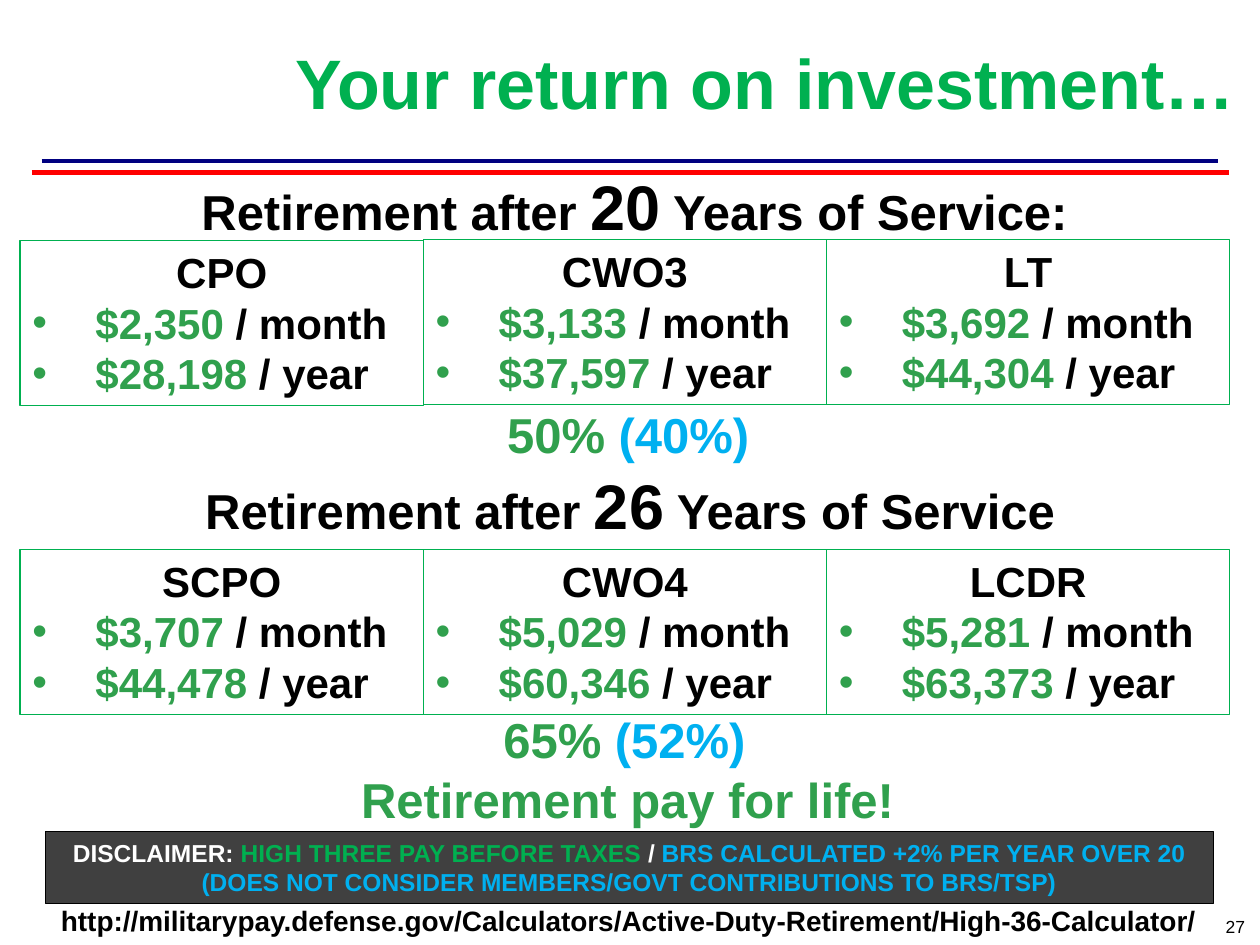
"""Build the retirement pay comparison slide."""
from lxml.etree import SubElement
from pptx import Presentation
from pptx.dml.color import RGBColor
from pptx.enum.shapes import MSO_CONNECTOR, MSO_SHAPE
from pptx.enum.text import MSO_ANCHOR, MSO_AUTO_SIZE, PP_ALIGN
from pptx.oxml.ns import qn
from pptx.util import Inches, Pt

BLACK = RGBColor(0x00, 0x00, 0x00)
WHITE = RGBColor(0xFF, 0xFF, 0xFF)
NAVY = RGBColor(0x00, 0x00, 0x80)
RED = RGBColor(0xFF, 0x00, 0x00)
GREEN = RGBColor(0x00, 0xB0, 0x50)
PAY_GREEN = RGBColor(0x30, 0xA0, 0x4D)
BLUE = RGBColor(0x00, 0xB0, 0xF0)
GRAY = RGBColor(0x40, 0x40, 0x40)
FONT = "Arial"

TITLE = "Your return on investment…"
RULES = [(0.33, 1.28, NAVY), (0.25, 1.37, RED)]
HEADINGS = [
    ((1.39, 1.28, 7.29, 0.71), "20", " Years of Service:"),
    ((1.39, 3.65, 7.22, 0.71), "26", " Years of Service"),
]
PERCENTAGES = [
    ((3.91, 3.16, 2.15, 0.57), "50% ", "(40%)"),
    ((3.76, 5.58, 2.39, 0.57), "65% ", "(52%)"),
]
PAY_ROWS = [
    ((1.91, 1.9, 1.9), [("CPO", "$2,350", "$28,198"),
                        ("CWO3", "$3,133", "$37,597"),
                        ("LT", "$3,692", "$44,304")]),
    ((4.36, 4.36, 4.36), [("SCPO", "$3,707", "$44,478"),
                          ("CWO4", "$5,029", "$60,346"),
                          ("LCDR", "$5,281", "$63,373")]),
]
CARD_LEFT, CARD_WIDTH, CARD_HEIGHT = 0.16, 3.2, 1.31
DISCLAIMER = [
    ("DISCLAIMER: ", WHITE),
    ("HIGH THREE PAY BEFORE TAXES ", GREEN),
    ("/ ", WHITE),
    ("BRS CALCULATED +2% PER YEAR OVER 20 "
     "(DOES NOT CONSIDER MEMBERS/GOVT CONTRIBUTIONS TO BRS/TSP)", BLUE),
]
LINK = "http://militarypay.defense.gov/Calculators/Active-Duty-Retirement/High-36-Calculator/"


def write(paragraph, runs, size, align=PP_ALIGN.CENTER, bold=True):
    paragraph.alignment = align
    paragraph.font.name = FONT
    paragraph.font.size = Pt(size)
    paragraph.font.bold = bold
    for text, color, *own_size in runs:
        run = paragraph.add_run()
        run.text = text
        run.font.color.rgb = color
        if own_size:
            run.font.size = Pt(own_size[0])


def add_text(slide, box, runs, size, wrap=True, **style):
    frame = slide.shapes.add_textbox(*map(Inches, box)).text_frame
    frame.word_wrap = wrap
    write(frame.paragraphs[0], runs, size, **style)


def add_box(slide, box, line_color, fill_color=None):
    shape = slide.shapes.add_shape(MSO_SHAPE.RECTANGLE, *map(Inches, box))
    shape.shadow.inherit = False
    if fill_color is None:
        shape.fill.background()
    else:
        shape.fill.solid()
        shape.fill.fore_color.rgb = fill_color
    shape.line.color.rgb = line_color
    shape.line.width = Pt(0.75)
    frame = shape.text_frame
    frame.word_wrap = True
    frame.auto_size = MSO_AUTO_SIZE.SHAPE_TO_FIT_TEXT
    frame.vertical_anchor = MSO_ANCHOR.TOP
    return frame


def add_bullet(paragraph, color):
    properties = paragraph._p.get_or_add_pPr()
    properties.set("marL", str(Inches(0.5)))
    properties.set("indent", str(Inches(-0.5)))
    bullet_color = SubElement(properties, qn("a:buClr"))
    SubElement(bullet_color, qn("a:srgbClr")).set("val", str(color))
    SubElement(properties, qn("a:buFont")).set("typeface", FONT)
    SubElement(properties, qn("a:buChar")).set("char", "•")


def add_pay_card(slide, box, rank, monthly, yearly):
    frame = add_box(slide, box, GREEN)
    write(frame.paragraphs[0], [(rank, BLACK)], 24)
    for amount, period in ((monthly, "month"), (yearly, "year")):
        paragraph = frame.add_paragraph()
        add_bullet(paragraph, PAY_GREEN)
        runs = [(f"{amount} ", PAY_GREEN), (f"/ {period}", BLACK)]
        write(paragraph, runs, 24, PP_ALIGN.LEFT)


def add_rule(slide, left, top, color):
    rule = slide.shapes.add_connector(
        MSO_CONNECTOR.STRAIGHT, Inches(left), Inches(top), Inches(10 - left), Inches(top))
    rule.line.color.rgb = color
    rule.line.width = Pt(2.5)
    SubElement(rule._element.spPr, qn("a:effectLst"))


def add_title(slide):
    title = slide.shapes.title
    title.left, title.top, title.width, title.height = map(Inches, (1, 0.34, 9, 0.69))
    frame = title.text_frame
    frame.word_wrap = True
    frame.auto_size = MSO_AUTO_SIZE.NONE
    frame.vertical_anchor = MSO_ANCHOR.BOTTOM
    frame.margin_right = Inches(0.2)
    paragraph = frame.paragraphs[0]
    paragraph.line_spacing = 0.85
    write(paragraph, [(TITLE, GREEN)], 40, PP_ALIGN.RIGHT)


def main():
    presentation = Presentation()
    presentation.slide_width, presentation.slide_height = Inches(10), Inches(7.5)
    slide = presentation.slides.add_slide(presentation.slide_layouts[5])
    for rule in RULES:
        add_rule(slide, *rule)
    add_title(slide)
    for box, years, ending in HEADINGS:
        runs = [("Retirement after ", BLACK), (years, BLACK, 36), (ending, BLACK)]
        add_text(slide, box, runs, 28)
    for tops, cards in PAY_ROWS:
        for column, (top, card) in enumerate(zip(tops, cards)):
            left = CARD_LEFT + column * CARD_WIDTH
            add_pay_card(slide, (left, top, CARD_WIDTH, CARD_HEIGHT), *card)
    for box, high_three, blended in PERCENTAGES:
        add_text(slide, box, [(high_three, PAY_GREEN), (blended, BLUE)], 28, wrap=False)
    add_text(slide, (2.74, 6.06, 4.48, 0.57),
             [("Retirement pay for life!", PAY_GREEN)], 28, wrap=False)
    disclaimer = add_box(slide, (0.36, 6.6, 9.27, 0.57), BLACK, GRAY)
    write(disclaimer.paragraphs[0], DISCLAIMER, 14)
    add_text(slide, (0.31, 7.12, 9.36, 0.37), [(LINK, BLACK)], 16)
    add_text(slide, (9.25, 7.22, 0.73, 0.28), [("27", BLACK)], 10,
             align=PP_ALIGN.RIGHT, bold=False)
    presentation.save("out.pptx")


if __name__ == "__main__":
    main()
